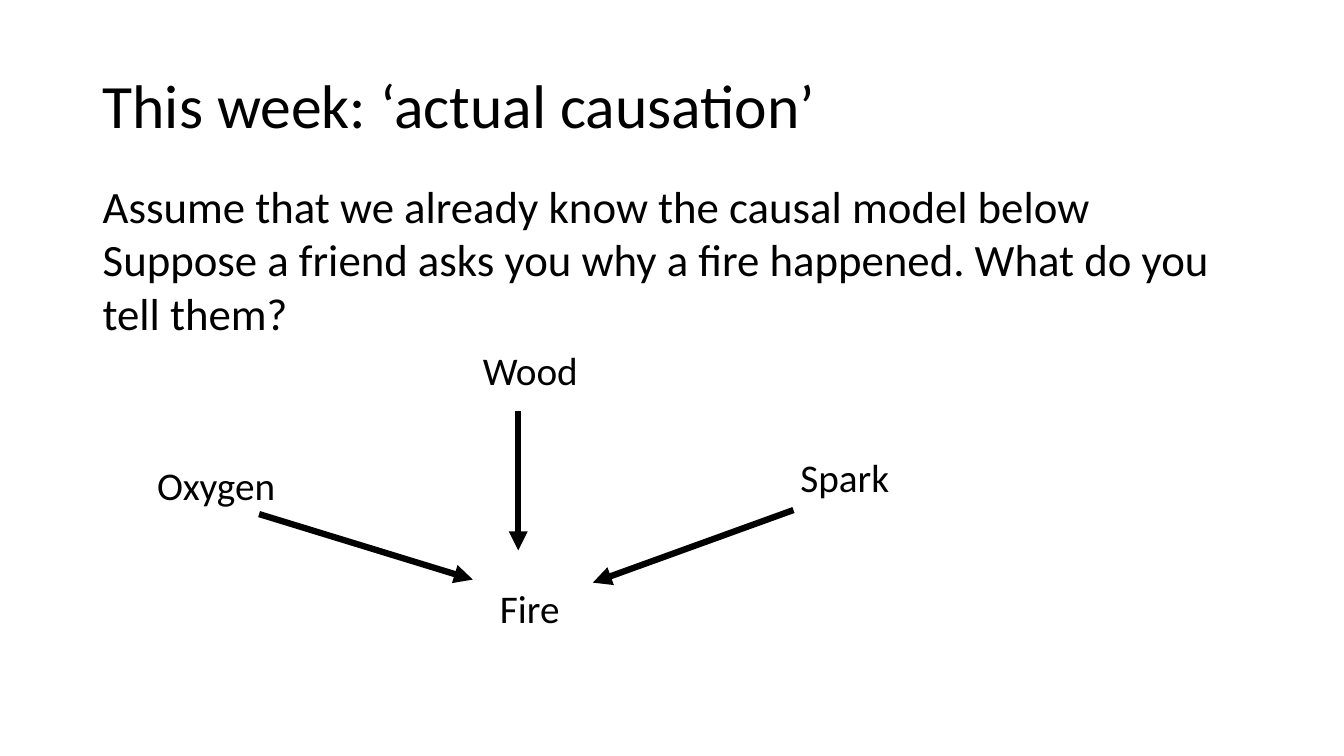
import pptx
import pptx.dml.color
import pptx.enum.shapes
import pptx.enum.text
import pptx.oxml.ns
import pptx.util
import lxml.etree

Inches = pptx.util.Inches
ANCHOR = pptx.enum.text.MSO_ANCHOR
BLACK = "000000"


def color(code):
    return pptx.dml.color.RGBColor.from_string(code)


def write(slide, text, box, size=28, font="Calibri", fill=BLACK,
          anchor=ANCHOR.TOP, spacing=None):
    shape = slide.shapes.add_textbox(*map(Inches, box))
    frame = shape.text_frame
    frame.word_wrap = True
    frame.vertical_anchor = anchor
    frame.text = text
    for para in frame.paragraphs:
        para.line_spacing = spacing
        for run in para.runs:
            run.font.name = font
            run.font.size = pptx.util.Pt(size)
            run.font.color.rgb = color(fill)
    return shape


def arrow(slide, start, end, fill=BLACK, width=4.5):
    line = slide.shapes.add_connector(
        pptx.enum.shapes.MSO_CONNECTOR.STRAIGHT, *map(Inches, start + end))
    line.line.color.rgb = color(fill)
    line.line.width = pptx.util.Pt(width)
    qn = pptx.oxml.ns.qn
    stroke = line.line._get_or_add_ln()
    lxml.etree.SubElement(stroke, qn("a:tailEnd"), type="triangle")
    lxml.etree.SubElement(line._element.spPr, qn("a:effectLst"))


def header(slide, box):
    write(slide, "This week: ‘actual causation’", box, size=44,
          anchor=ANCHOR.MIDDLE, spacing=0.9)


def body(slide, box):
    write(slide, "Assume that we already know the causal model below\n"
          "Suppose a friend asks you why a fire happened. "
          "What do you tell them?", box, size=32)


def model(slide, box):
    left, top, width, height = box
    nodes = [("Oxygen", 0, 1.14), ("Wood", 3.23, 0),
             ("Spark", 6.38, 1.06), ("Fire", 3.4, 2.36)]
    for name, x, y in nodes:
        write(slide, name, (left + x, top + y, 4.58, 0.57))
    links = [((3.68, 0.69), (3.68, 2.07)),
             ((1.11, 1.71), (3.23, 2.36)),
             ((6.41, 1.67), (4.42, 2.39))]
    for ends in links:
        start, end = [(left + x, top + y) for x, y in ends]
        arrow(slide, start, end)


def main():
    deck = pptx.Presentation()
    deck.slide_width = Inches(13.33)
    deck.slide_height = Inches(7.5)
    slide = deck.slides.add_slide(deck.slide_layouts[6])
    header(slide, (0.92, 0.35, 11.5, 1.45))
    model(slide, (1.46, 3.39, 10.96, 2.93))
    body(slide, (0.92, 1.72, 11.68, 1.72))
    deck.save("out.pptx")


if __name__ == "__main__":
    main()
